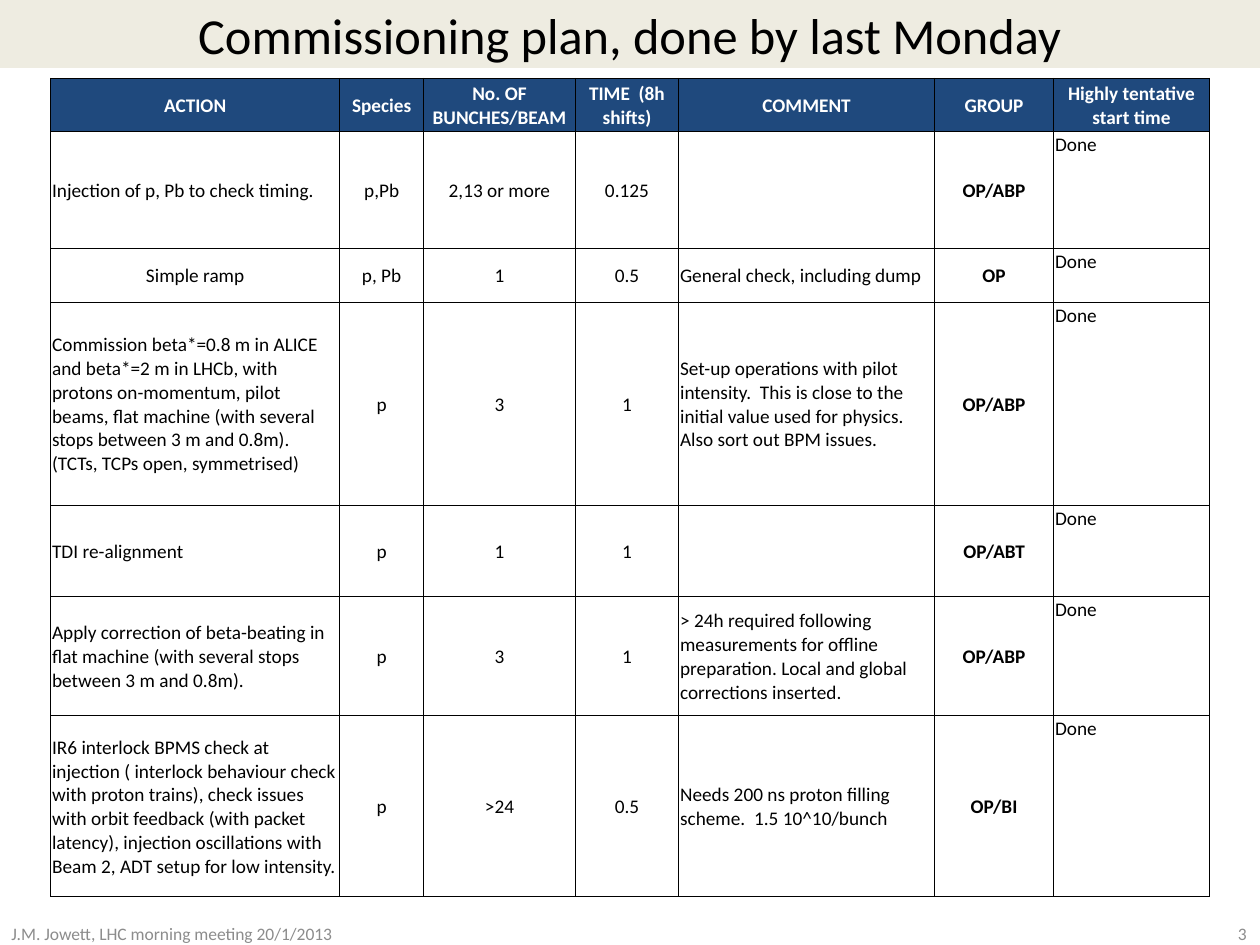
from dataclasses import dataclass

from lxml import etree
from pptx import Presentation
from pptx.dml.color import RGBColor
from pptx.enum import shapes, text
from pptx.oxml import ns
from pptx.util import Cm, Pt


@dataclass(frozen=True)
class Theme:
    font: str = "Calibri"
    ink: str = "000000"
    paper: str = "FFFFFF"
    banner: str = "EEECE1"
    header: str = "1F497D"
    muted: str = "8C8C8C"
    title_size: float = 28.8
    table_size: float = 11
    footer_size: float = 10
    border: float = 0.5


THEME = Theme()
LEFT, CENTER, RIGHT = text.PP_ALIGN.LEFT, text.PP_ALIGN.CENTER, text.PP_ALIGN.RIGHT
MIDDLE, TOP = text.MSO_ANCHOR.MIDDLE, text.MSO_ANCHOR.TOP


def write(frame, wording, size, color, align=LEFT, bold=False):
    frame.word_wrap = True
    frame.text = wording
    paragraph = frame.paragraphs[0]
    paragraph.alignment = align
    for run in paragraph.runs:
        run.font.name = THEME.font
        run.font.size = Pt(size)
        run.font.bold = bold
        run.font.color.rgb = RGBColor.from_string(color)


def add_borders(cell):
    properties = cell._tc.get_or_add_tcPr()
    for side in ("lnL", "lnR", "lnT", "lnB"):
        line = etree.SubElement(properties, ns.qn(f"a:{side}"), w=str(Pt(THEME.border)))
        fill = etree.SubElement(line, ns.qn("a:solidFill"))
        etree.SubElement(fill, ns.qn("a:srgbClr"), val=THEME.ink)


prs = Presentation()
prs.slide_width, prs.slide_height = Cm(25.4), Cm(19.05)
slide = prs.slides.add_slide(prs.slide_layouts[6])

# Title banner
banner = slide.shapes.add_shape(shapes.MSO_SHAPE.RECTANGLE, 0, 0, prs.slide_width, Cm(1.37))
banner.shadow.inherit = False
banner.fill.solid()
banner.fill.fore_color.rgb = RGBColor.from_string(THEME.banner)
banner.line.fill.background()
banner.text_frame.vertical_anchor = MIDDLE
write(banner.text_frame, "Commissioning plan, done by last Monday",
      THEME.title_size, THEME.ink, CENTER)

# Footer
for left, width, wording, align in (
    (-0.02, 9.52, "J.M. Jowett, LHC morning meeting 20/1/2013", LEFT),
    (19.46, 5.92, "3", RIGHT),
):
    footer = slide.shapes.add_textbox(Cm(left), Cm(18.52), Cm(width), Cm(0.6))
    footer.text_frame.vertical_anchor = MIDDLE
    write(footer.text_frame, wording, THEME.footer_size, THEME.muted, align)

# Commissioning steps
plan = [
    ("ACTION", "Species", "No. OF BUNCHES/BEAM", "TIME  (8h shifts)", "COMMENT", "GROUP",
     "Highly tentative start time"),
    ("Injection of p, Pb to check timing.", "p,Pb", "2,13 or more", "0.125", "", "OP/ABP", "Done"),
    ("Simple ramp", "p, Pb", "1", "0.5", "General check, including dump", "OP", "Done"),
    ("Commission beta*=0.8 m in ALICE and beta*=2 m in LHCb, with protons on-momentum, "
     "pilot beams, flat machine (with several stops between 3 m and 0.8m). "
     "(TCTs, TCPs open, symmetrised)", "p", "3", "1",
     "Set-up operations with pilot intensity.  This is close to the initial value used "
     "for physics.  Also sort out BPM issues.", "OP/ABP", "Done"),
    ("TDI re-alignment", "p", "1", "1", "", "OP/ABT", "Done"),
    ("Apply correction of beta-beating in flat machine (with several stops between "
     "3 m and 0.8m).", "p", "3", "1",
     "> 24h required following measurements for offline preparation. "
     "Local and global corrections inserted.", "OP/ABP", "Done"),
    ("IR6 interlock BPMS check at injection ( interlock behaviour check with proton trains), "
     "check issues with orbit feedback (with packet latency), injection oscillations with "
     "Beam 2, ADT setup for low intensity.", "p", ">24", "0.5",
     "Needs 200 ns proton filling scheme.  1.5 10^10/bunch", "OP/BI", "Done"),
]
column_widths = [5.83, 1.69, 3.06, 2.08, 5.16, 2.4, 3.14]
row_heights = [1.07, 2.35, 1.09, 4.1, 1.83, 2.41, 3.65]
column_aligns = [LEFT, CENTER, CENTER, CENTER, LEFT, CENTER, LEFT]
GROUP, START = 5, 6

schedule = slide.shapes.add_table(
    len(plan), len(column_widths), Cm(1.02), Cm(1.58),
    Cm(sum(column_widths)), Cm(sum(row_heights))).table
schedule.first_row = schedule.horz_banding = False
for column, width in zip(schedule.columns, column_widths):
    column.width = Cm(width)
for row, height in zip(schedule.rows, row_heights):
    row.height = Cm(height)

for r, step in enumerate(plan):
    for c, wording in enumerate(step):
        cell = schedule.cell(r, c)
        is_header = r == 0
        centered = is_header or wording == "Simple ramp"
        add_borders(cell)
        cell.fill.solid()
        cell.fill.fore_color.rgb = RGBColor.from_string(THEME.header if is_header else THEME.paper)
        cell.margin_left = cell.margin_right = cell.margin_top = Cm(0.03)
        cell.margin_bottom = 0
        cell.vertical_anchor = TOP if c == START and not is_header else MIDDLE
        write(cell.text_frame, wording, THEME.table_size,
              THEME.paper if is_header else THEME.ink,
              CENTER if centered else column_aligns[c],
              bold=is_header or c == GROUP)

prs.save("out.pptx")
